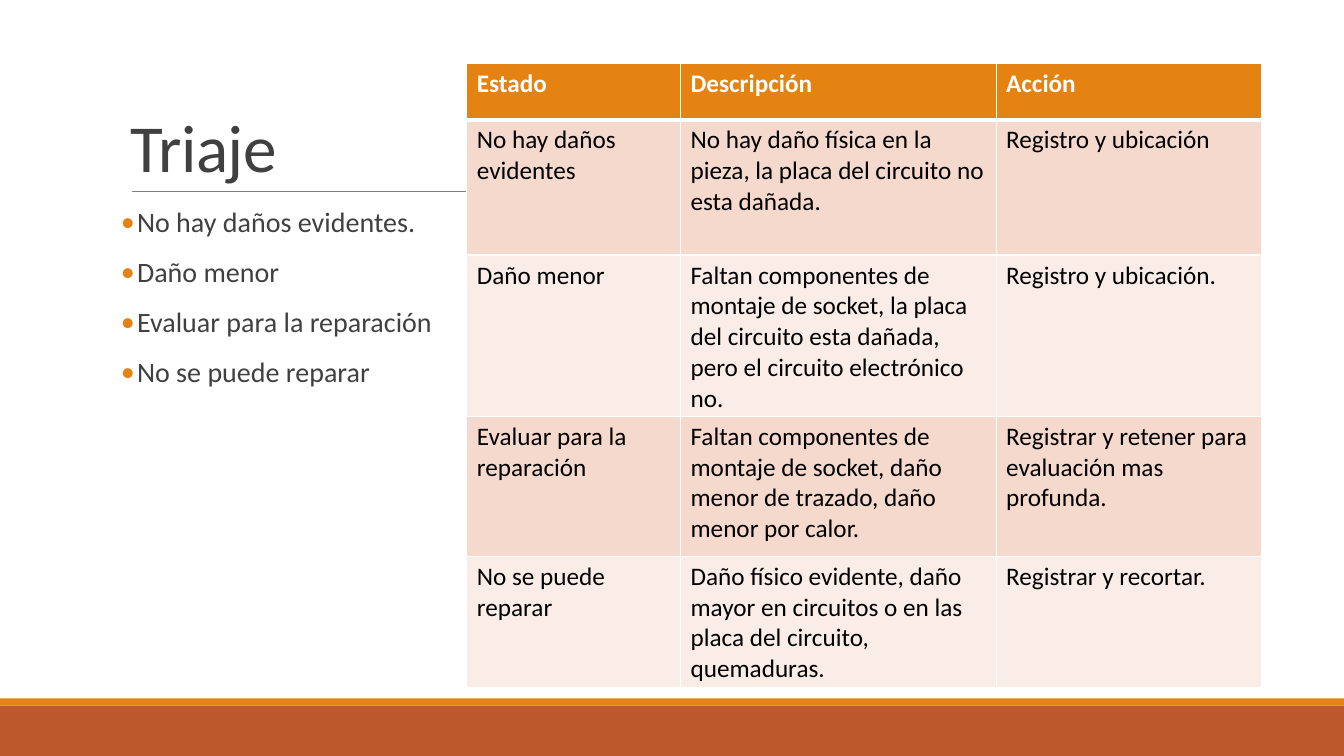
from lxml import etree
from pptx import Presentation
from pptx.dml.color import RGBColor
from pptx.enum import shapes, text
from pptx.oxml import ns
from pptx.util import Inches, Pt

FONT = "Calibri"
ORANGE, RUST, DARK, WHITE = "E48312", "BD582C", "404040", "FFFFFF"
BANDS = ("F5D9CC", "FAEDE7")

STATES = ["No hay daños evidentes.", "Daño menor",
          "Evaluar para la reparación", "No se puede reparar"]
COLUMN_WIDTHS = [2.12, 3.13, 2.63]
ROW_HEIGHTS = [0.56, 1.34, 1.29, 1.39, 1.29]
TRIAGE = [
    ("Estado", "Descripción", "Acción"),
    ("No hay daños evidentes",
     "No hay daño física en la pieza, la placa del circuito no esta dañada.",
     "Registro y ubicación"),
    ("Daño menor",
     "Faltan componentes de montaje de socket, la placa del circuito esta "
     "dañada, pero el circuito electrónico no.",
     "Registro y ubicación."),
    ("Evaluar para la reparación",
     "Faltan componentes de montaje de socket, daño menor de trazado, "
     "daño menor por calor.",
     "Registrar y retener para evaluación mas profunda."),
    ("No se puede reparar",
     "Daño físico evidente, daño mayor en circuitos o en las placa del "
     "circuito, quemaduras.",
     "Registrar y recortar."),
]


def color(value):
    return RGBColor.from_string(value)


def add_run(paragraph, words, size, ink, bold=False):
    run = paragraph.add_run()
    run.text = words
    run.font.name, run.font.size, run.font.bold = FONT, Pt(size), bold
    run.font.color.rgb = color(ink)
    return run


def add_xml(parent, tag, **attributes):
    return etree.SubElement(parent, ns.qn(tag), attributes)


def add_frame(slide, left, top, width, height):
    frame = slide.shapes.add_textbox(
        Inches(left), Inches(top), Inches(width), Inches(height)).text_frame
    frame.word_wrap = True
    return frame


def add_footer(slide, left, top, width, height):
    """Draw a thin orange stripe above a rust band."""
    stripe = 0.07
    for y, tall, fill in ((top + stripe, height - stripe, RUST),
                          (top, stripe, ORANGE)):
        band = slide.shapes.add_shape(
            shapes.MSO_SHAPE.RECTANGLE, Inches(left), Inches(y),
            Inches(width), Inches(tall))
        band.shadow.inherit = False
        band.fill.solid()
        band.fill.fore_color.rgb = color(fill)
        band.line.fill.background()


def add_title(slide, left, top, width, height, rule_width):
    """Place the title at the bottom of its box, with a rule below it."""
    inset = 0.11
    bottom = Inches(top + height)
    rule = slide.shapes.add_connector(
        shapes.MSO_CONNECTOR.STRAIGHT, Inches(left + inset), bottom,
        Inches(left + inset + rule_width), bottom)
    rule.line.color.rgb = color("808080")
    rule.line.width = Pt(0.5)
    add_xml(rule._element.spPr, "a:effectLst")

    frame = add_frame(slide, left, top, width, height)
    frame.vertical_anchor = text.MSO_ANCHOR.BOTTOM
    heading = frame.paragraphs[0]
    heading.line_spacing = 0.85
    run = add_run(heading, "Triaje", 48, DARK)
    run.font._element.set("spc", "-50")


def add_states(slide, left, top, width, height):
    frame = add_frame(slide, left, top, width, height)
    frame.margin_left = frame.margin_right = 0
    indent = Inches(0.16)
    for index, state in enumerate(STATES):
        item = frame.add_paragraph() if index else frame.paragraphs[0]
        item.line_spacing = 0.9
        item.space_before, item.space_after = Pt(12), Pt(2)
        props = item._p.get_or_add_pPr()
        props.set("marL", str(indent))
        props.set("indent", str(-indent))
        bullet_color = add_xml(props, "a:buClr")
        add_xml(bullet_color, "a:srgbClr", val=ORANGE)
        add_xml(props, "a:buFont", typeface=FONT)
        add_xml(props, "a:buChar", char="•")
        add_run(item, state, 20, DARK)


def add_borders(cell, bottom_width):
    props = cell._tc.get_or_add_tcPr()
    for side, width in (("L", 1), ("R", 1), ("T", 1), ("B", bottom_width)):
        border = add_xml(props, "a:ln" + side, w=str(Pt(width)))
        add_xml(add_xml(border, "a:solidFill"), "a:srgbClr", val=WHITE)


def add_triage_table(slide, left, top):
    table = slide.shapes.add_table(
        len(TRIAGE), len(COLUMN_WIDTHS), Inches(left), Inches(top),
        Inches(sum(COLUMN_WIDTHS)), Inches(sum(ROW_HEIGHTS))).table
    for column, width in zip(table.columns, COLUMN_WIDTHS):
        column.width = Inches(width)
    for r, entries in enumerate(TRIAGE):
        table.rows[r].height = Inches(ROW_HEIGHTS[r])
        header = r == 0
        for c, entry in enumerate(entries):
            cell = table.cell(r, c)
            # The schema puts borders ahead of the fill.
            add_borders(cell, 3 if header else 1)
            cell.fill.solid()
            cell.fill.fore_color.rgb = color(
                ORANGE if header else BANDS[(r - 1) % 2])
            add_run(cell.text_frame.paragraphs[0], entry, 18,
                    WHITE if header else "000000", header)


def main():
    deck = Presentation()
    deck.slide_width, deck.slide_height = Inches(13.33), Inches(7.5)
    slide = deck.slides.add_slide(deck.slide_layouts[6])
    add_footer(slide, 0, 6.93, 13.33, 0.57)
    add_title(slide, 1.2, 0.31, 3.43, 1.59, rule_width=10.9)
    add_states(slide, 1.2, 2.02, 5.4, 4.4)
    add_triage_table(slide, 4.63, 0.63)
    deck.save("out.pptx")


if __name__ == "__main__":
    main()
